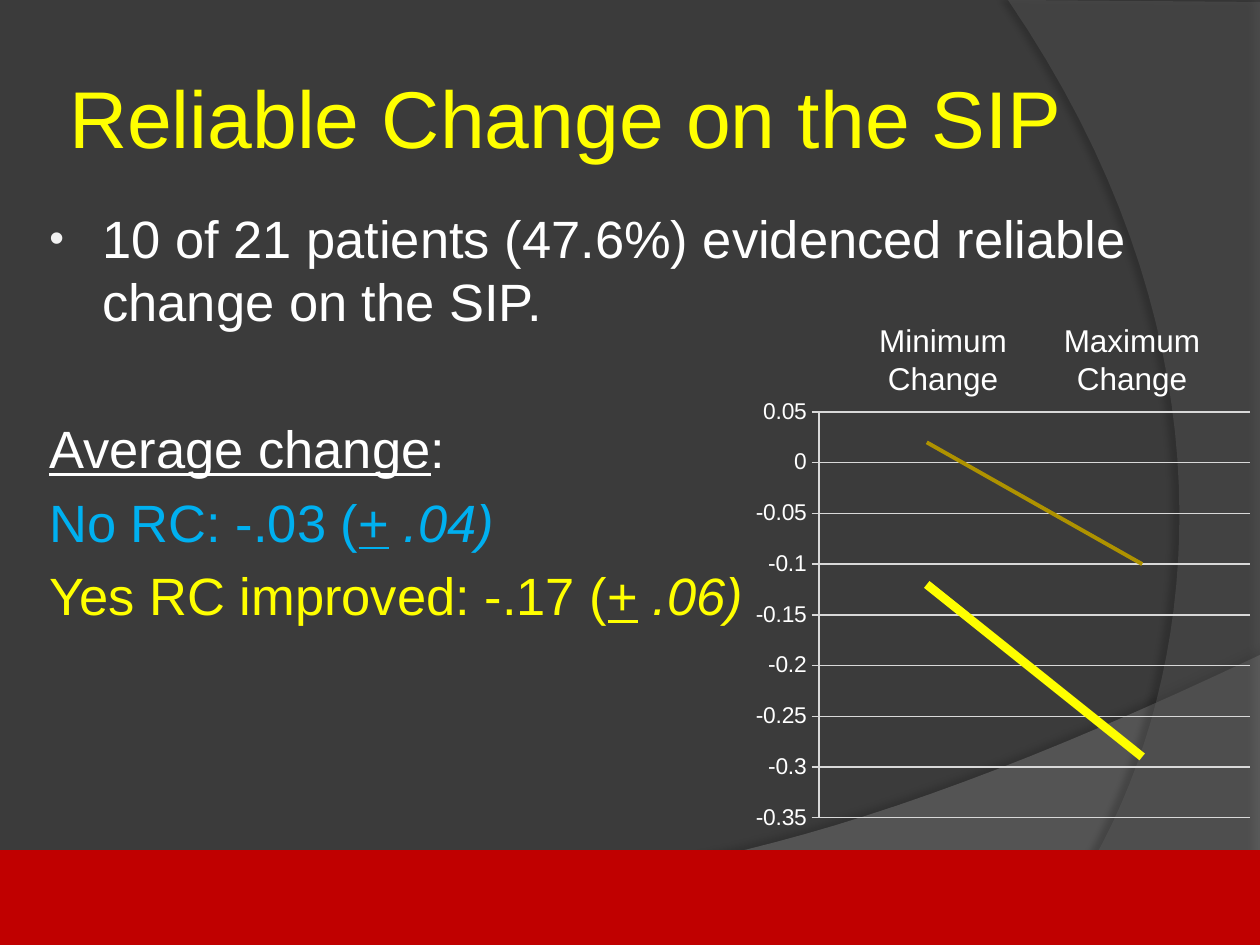
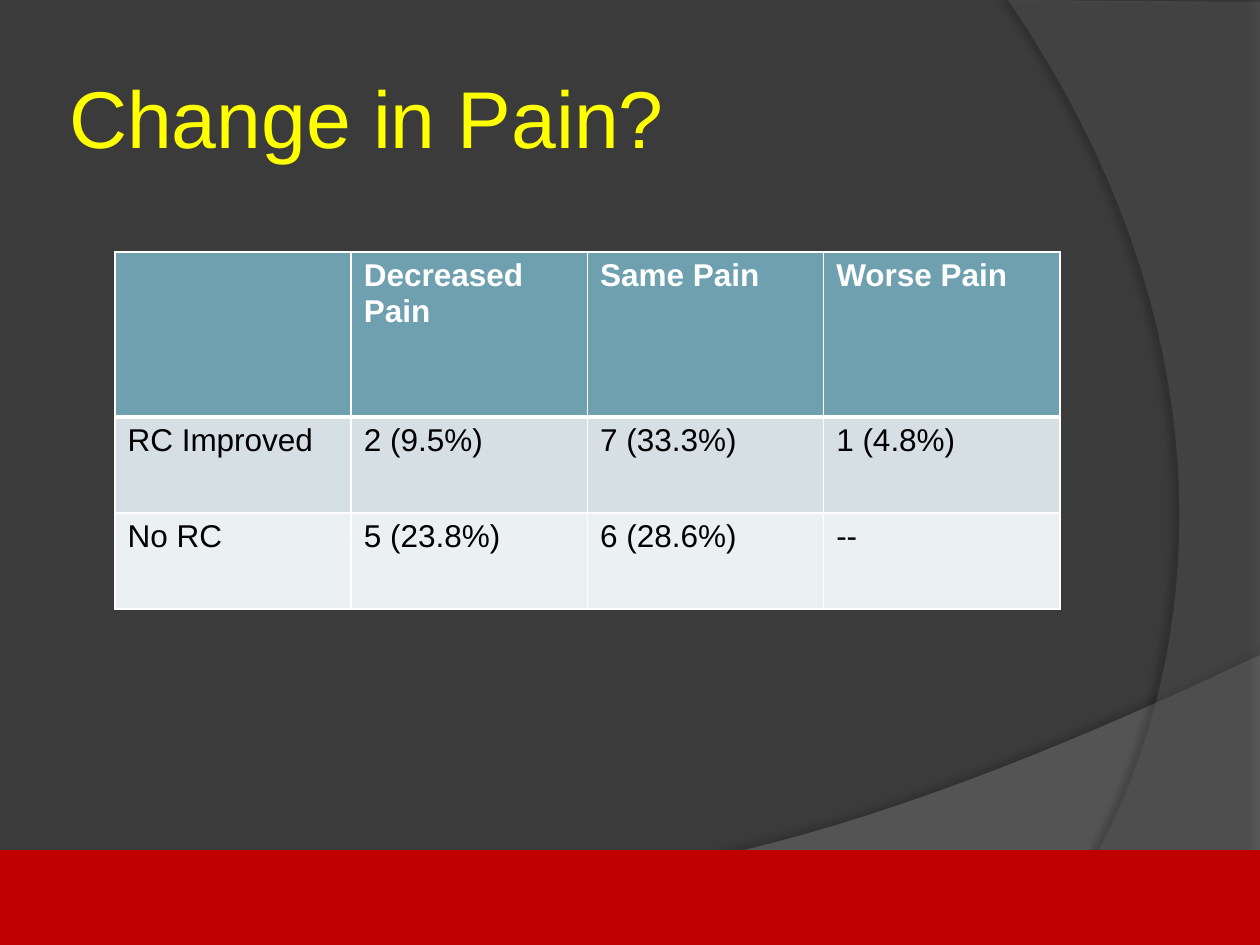
from lxml import etree
from pptx import Presentation
from pptx.chart.data import CategoryChartData
from pptx.dml.color import RGBColor
from pptx.enum.chart import XL_CHART_TYPE, XL_MARKER_STYLE, XL_TICK_MARK
from pptx.enum.shapes import MSO_SHAPE
from pptx.enum.text import MSO_ANCHOR, PP_ALIGN
from pptx.oxml.ns import qn
from pptx.util import Pt

LINE_CHART = XL_CHART_TYPE.LINE
NO_MARKER = XL_MARKER_STYLE.NONE
TICK_OUTSIDE = XL_TICK_MARK.OUTSIDE
RECTANGLE = MSO_SHAPE.RECTANGLE
MIDDLE = MSO_ANCHOR.MIDDLE
CENTER = PP_ALIGN.CENTER

EMU_PER_PX = 914400 / 126
WIDTH, HEIGHT = 1260, 945
FONT = "Arial"
BACKGROUND, BAND = "3B3B3B", "C00000"
WHITE, BLACK, YELLOW, BLUE, GOLD = "FFFFFF", "000000", "FFFF00", "00B0F0", "AE9200"
GRID = "D9D9D9"
HEADER_FILL, ROW_FILLS = "6EA0B0", ["D5DFE4", "EBF0F2"]


def px(length):
    return round(length * EMU_PER_PX)


def px_all(*lengths):
    return [px(length) for length in lengths]


def rgb(color):
    return RGBColor.from_string(color)


def add_child(parent, tag, **attributes):
    child = etree.SubElement(parent, qn(tag))
    for name, value in attributes.items():
        child.set(name, str(value))
    return child


def style_font(font, size, color, bold=False):
    font.name, font.size, font.bold = FONT, Pt(size), bold
    font.color.rgb = rgb(color)


def bezier(start, control_1, control_2, end, steps=40):
    """Points along a cubic curve, both ends included."""
    points = []
    for step in range(steps + 1):
        t = step / steps
        weights = ((1 - t) ** 3, 3 * t * (1 - t) ** 2, 3 * t * t * (1 - t), t ** 3)
        corners = (start, control_1, control_2, end)
        points.append(tuple(sum(w * corner[axis] for w, corner in zip(weights, corners))
                            for axis in (0, 1)))
    return points


def add_swoosh(page, points, color, opacity, shadow_opacity, distance, direction):
    """Translucent outline with a soft shadow; direction is in degrees."""
    outline = [tuple(px_all(*point)) for point in points]
    builder = page.shapes.build_freeform(*outline[0])
    builder.add_line_segments(outline[1:], close=True)
    shape = builder.convert_to_shape()
    shape.fill.solid()
    shape.fill.fore_color.rgb = rgb(color)
    shape.line.fill.background()
    properties = shape._element.spPr
    add_child(properties.find(".//" + qn("a:srgbClr")), "a:alpha", val=opacity * 1000)
    effects = add_child(properties, "a:effectLst")
    shadow = add_child(effects, "a:outerShdw", blurRad=Pt(4), dist=Pt(distance),
                       dir=direction * 60000, algn="ctr", rotWithShape=0)
    add_child(add_child(shadow, "a:srgbClr", val=BLACK), "a:alpha", val=shadow_opacity * 1000)


def add_text_box(page, left, top, width, height):
    box = page.shapes.add_textbox(*px_all(left, top, width, height))
    box.text_frame.word_wrap = True
    return box.text_frame


def add_spans(para, spans, size):
    """Each span is (text, color, style); style may hold 'u' and 'i'."""
    for text, color, style in spans:
        span = para.add_run()
        span.text = text
        style_font(span.font, size, color)
        span.font.underline = "u" in style
        span.font.italic = "i" in style


def add_title(page, title):
    frame = add_text_box(page, 63, 38, 1029, 157)
    frame.vertical_anchor = MIDDLE
    frame.margin_left = frame.margin_right = frame.margin_top = frame.margin_bottom = px(6)
    add_spans(frame.paragraphs[0], [(title, YELLOW, "")], 46)


def add_page(deck, title):
    page = deck.slides.add_slide(deck.slide_layouts[6])
    page.background.fill.solid()
    page.background.fill.fore_color.rgb = rgb(BACKGROUND)
    lower_curve = bezier((WIDTH, 655), (704, 919), (493, 906), (0, 888))
    add_swoosh(page, [(0, HEIGHT), (WIDTH, HEIGHT)] + lower_curve, "7F7F7F", 45, 35, 3.5, 270)
    right_curve = bezier((1034, HEIGHT), (1178, 780), (1283, 402), (1008, 0))
    add_swoosh(page, [(WIDTH, 2), (WIDTH, HEIGHT)] + right_curve, "5E5E5E", 40, 45, 4, 180)
    band = page.shapes.add_shape(RECTANGLE, *px_all(0, 850, WIDTH, 95))
    band.shadow.inherit = False
    band.fill.solid()
    band.fill.fore_color.rgb = rgb(BAND)
    band.line.fill.background()
    add_title(page, title)
    return page


def add_bullet(para):
    properties = para._p.get_or_add_pPr()
    properties.set("marL", str(px(58)))
    properties.set("indent", str(px(-53)))
    add_child(add_child(properties, "a:buClr"), "a:srgbClr", val="F2F2F2")
    add_child(properties, "a:buSzPct", val=80000)
    add_child(properties, "a:buFont", typeface=FONT)
    add_child(properties, "a:buChar", char="•")


def add_findings(page):
    findings = [
        (0, [("10 of 21 patients (47.6%) evidenced reliable change on the SIP.", WHITE, "")]),
        (48, [("Average change", WHITE, "u"), (":", WHITE, "")]),
        (6, [("No RC: -.03 (", BLUE, ""), ("+", BLUE, "u"), (" .04)", BLUE, "i")]),
        (6, [("Yes RC improved: -.17 (", YELLOW, ""), ("+", YELLOW, "u"),
             (" .06)", YELLOW, "i")]),
    ]
    frame = add_text_box(page, 32, 200, 1134, 623)
    for index, (space_before, spans) in enumerate(findings):
        para = frame.add_paragraph() if index else frame.paragraphs[0]
        if index:
            para.space_before = Pt(space_before)
            para._p.get_or_add_pPr().set("marL", str(px(5)))
        else:
            add_bullet(para)
        add_spans(para, spans, 30)


def add_chart_label(page, left, words):
    frame = add_text_box(page, left, 315, 168, 89)
    frame.text = "\n".join(words)
    for para in frame.paragraphs:
        para.alignment = CENTER
        style_font(para.runs[0].font, 18, WHITE)


def place_plot(chart, **fractions):
    plot_area = chart._chartSpace.chart.plotArea
    for layout in plot_area.findall(qn("c:layout")):
        plot_area.remove(layout)
    layout = etree.Element(qn("c:layout"))
    plot_area.insert(0, layout)
    manual = add_child(layout, "c:manualLayout")
    add_child(manual, "c:layoutTarget", val="inner")
    for mode in ("xMode", "yMode"):
        add_child(manual, "c:" + mode, val="edge")
    for name, fraction in fractions.items():
        add_child(manual, "c:" + name, val=fraction)


def add_change_chart(page):
    left, top, width, height = 746, 391, 514, 448
    data = CategoryChartData()
    data.categories = ["1", "2"]
    data.add_series("Series 1", [-0.12, -0.29])
    data.add_series("Series 2", [0.02, -0.1])
    chart = page.shapes.add_chart(LINE_CHART, *px_all(left, top, width, height), data).chart
    style_font(chart.font, 10, WHITE)
    chart.has_legend = chart.has_title = False
    chart.plots[0].vary_by_categories = False
    for series, color, line_width in zip(chart.plots[0].series, [YELLOW, GOLD], [5, 2.25]):
        series.smooth = False
        series.marker.style = NO_MARKER
        series.format.line.color.rgb = rgb(color)
        series.format.line.width = Pt(line_width)
    chart.category_axis.visible = False
    axis = chart.value_axis
    axis.major_tick_mark = TICK_OUTSIDE
    style_font(axis.tick_labels.font, 13, WHITE)
    for line in (axis.format.line, axis.major_gridlines.format.line):
        line.color.rgb = rgb(GRID)
        line.width = Pt(0.75)
    place_plot(chart, x=(819 - left) / width, y=(412 - top) / height,
               w=431 / width, h=406 / height)


def set_borders(cell, top, bottom):
    properties = cell._tc.get_or_add_tcPr()
    for index, (side, width) in enumerate(zip("LRTB", (1, 1, top, bottom))):
        border = etree.Element(qn("a:ln" + side), w=str(Pt(width)))
        add_child(add_child(border, "a:solidFill"), "a:srgbClr", val=WHITE)
        properties.insert(index, border)


def add_pain_table(page):
    rows = [
        ["", "Decreased Pain", "Same Pain", "Worse Pain"],
        ["RC Improved", "2 (9.5%)", "7 (33.3%)", "1 (4.8%)"],
        ["No RC", "5 (23.8%)", "6 (28.6%)", "--"],
    ]
    heights = [165, 96, 96]
    table = page.shapes.add_table(3, 4, *px_all(115, 252, 945, sum(heights))).table
    for row_index, texts in enumerate(rows):
        header = row_index == 0
        table.rows[row_index].height = px(heights[row_index])
        for column_index, text in enumerate(texts):
            cell = table.cell(row_index, column_index)
            cell.text = text
            style_font(cell.text_frame.paragraphs[0].font, 18, WHITE if header else BLACK, header)
            cell.fill.solid()
            cell.fill.fore_color.rgb = rgb(HEADER_FILL if header else ROW_FILLS[row_index - 1])
            set_borders(cell, top=3 if row_index == 1 else 1, bottom=3 if header else 1)


def main():
    deck = Presentation()
    deck.slide_width, deck.slide_height = px_all(WIDTH, HEIGHT)

    page = add_page(deck, "Reliable Change on the SIP")
    add_findings(page)
    add_change_chart(page)
    add_chart_label(page, 859, ["Minimum", "Change"])
    add_chart_label(page, 1048, ["Maximum", "Change"])

    page = add_page(deck, "Change in Pain?")
    add_pain_table(page)

    deck.save("out.pptx")


if __name__ == "__main__":
    main()
